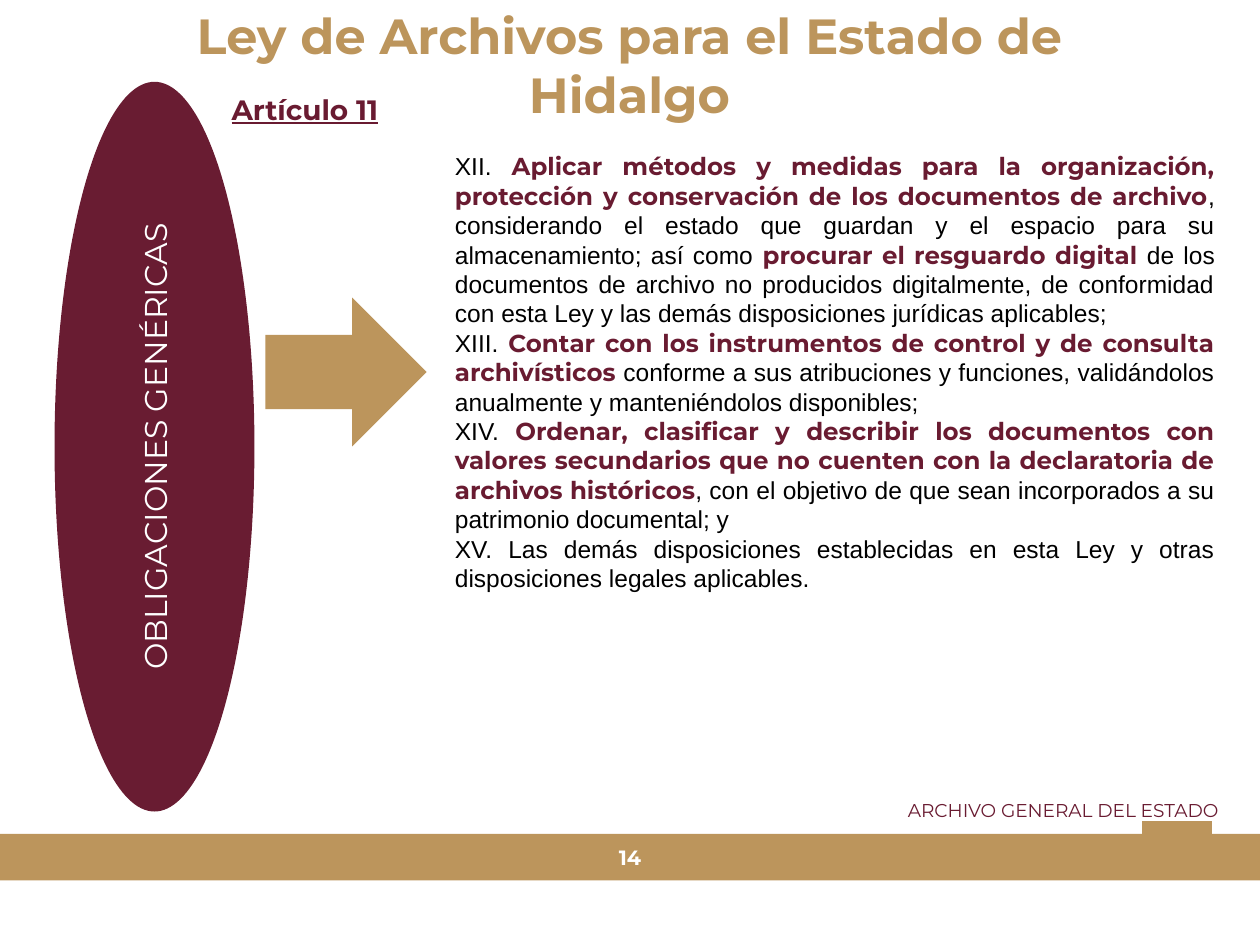
from dataclasses import dataclass

from lxml.etree import SubElement
from pptx import Presentation
from pptx.dml.color import RGBColor as Rgb
from pptx.enum.shapes import MSO_CONNECTOR as Link, MSO_SHAPE as Preset
from pptx.enum.text import MSO_ANCHOR as Anchor, MSO_AUTO_SIZE as Fit, PP_ALIGN as Align
from pptx.oxml.ns import qn
from pptx.util import Cm, Pt


@dataclass(frozen=True)
class Theme:
    gold: str = "BC955C"
    wine: str = "691B31"
    oval: str = "691C32"
    white: str = "FFFFFF"
    black: str = "000000"
    display: str = "Montserrat"
    plain: str = "Arial"
    title: float = 28.2
    label: float = 18
    heading: float = 16
    text: float = 14
    text_line: float = 16.8
    number: float = 11.8
    footer: float = 10.6

    def style(self, size, color, name=None, **extra):
        return {"name": name or self.display, "size": Pt(size), "color": color, "bold": False, **extra}


class SlideBuilder:
    def __init__(self, slide, theme):
        self.slide, self.theme = slide, theme
        self.shapes = slide.shapes

    def fill_text(self, box, paragraphs, align, inset=(0.25, 0.13), anchor=Anchor.TOP, fit=Fit.NONE,
                  **para_format):
        """Fill a shape with paragraphs, each a list of (text, style) spans."""
        frame = box.text_frame
        across, down = map(Cm, inset)
        frame_format = {"word_wrap": True, "auto_size": fit, "vertical_anchor": anchor,
                        "margin_left": across, "margin_right": across,
                        "margin_top": down, "margin_bottom": down}
        for key, value in frame_format.items():
            setattr(frame, key, value)
        for index, spans in enumerate(paragraphs):
            para = frame.add_paragraph() if index else frame.paragraphs[0]
            for key, value in {"alignment": align, **para_format}.items():
                setattr(para, key, value)
            for text, style in spans:
                span = para.add_run()
                span.text = text
                for key, value in style.items():
                    if key == "color":
                        span.font.color.rgb = Rgb.from_string(value)
                    else:
                        setattr(span.font, key, value)

    def place(self, box, area):
        for key, value in zip(("left", "top", "width", "height"), area):
            setattr(box, key, Cm(value))

    def title(self, area, text, style):
        box = self.shapes.title
        self.place(box, area)
        self.fill_text(box, [[(text, style)]], Align.CENTER, (0.23, 0.1))

    def body(self, area, paragraphs):
        box = self.slide.placeholders[1]
        self.place(box, area)
        self.fill_text(box, paragraphs, Align.JUSTIFY, space_before=Pt(0),
                       line_spacing=Pt(self.theme.text_line))
        for para in box.text_frame.paragraphs:
            properties = para._p.get_or_add_pPr()
            for key in ("marL", "indent"):
                properties.set(key, "0")
            SubElement(properties, qn("a:buNone"))

    def text(self, area, text, style, align=Align.CENTER, **options):
        box = self.shapes.add_textbox(*map(Cm, area))
        self.fill_text(box, [[(text, style)]], align, **options)

    def shape(self, preset, area, color):
        shape = self.shapes.add_shape(preset, *map(Cm, area))
        shape.shadow.inherit = False
        shape.fill.solid()
        shape.fill.fore_color.rgb = Rgb.from_string(color)
        shape.line.fill.background()
        return shape

    def upward_label(self, shape, text, style):
        self.fill_text(shape, [[(text, style)]], Align.CENTER, (0.2, 0.1), Anchor.MIDDLE)
        shape.text_frame._txBody.bodyPr.set("vert", "vert270")

    def line(self, start, end, color, width):
        line = self.shapes.add_connector(Link.STRAIGHT, *map(Cm, start + end))
        line.line.color.rgb = Rgb.from_string(color)
        line.line.width = Pt(width)
        SubElement(line._element.spPr, qn("a:effectLst"))


def main():
    theme = Theme()
    deck = Presentation()
    deck.slide_width, deck.slide_height = Cm(25.4), Cm(19.05)
    page = SlideBuilder(deck.slides.add_slide(deck.slide_layouts[1]), theme)

    plain = theme.style(theme.text, theme.black, theme.plain)
    strong = theme.style(theme.text, theme.wine, bold=True)
    obligations = [
        [("XII. ", plain),
         ("Aplicar métodos y medidas para la organización, protección y conservación "
          "de los documentos de archivo", strong),
         (", considerando el estado que guardan y el espacio para su almacenamiento; así como ", plain),
         ("procurar el resguardo digital ", strong),
         ("de los documentos de archivo no producidos digitalmente, de conformidad con esta Ley "
          "y las demás disposiciones jurídicas aplicables;", plain)],
        [("XIII. ", plain),
         ("Contar con los instrumentos de control y de consulta archivísticos ", strong),
         ("conforme a sus atribuciones y funciones, validándolos anualmente "
          "y manteniéndolos disponibles;", plain)],
        [("XIV. ", plain),
         ("Ordenar, clasificar y describir los documentos con valores secundarios "
          "que no cuenten con la declaratoria de archivos históricos", strong),
         (", con el objetivo de que sean incorporados a su patrimonio documental; y", plain)],
        [("XV. Las demás disposiciones establecidas en esta Ley "
          "y otras disposiciones legales aplicables.", plain)],
    ]

    page.shape(Preset.RECTANGLE, (-0.05, 16.81, 25.55, 0.94), theme.gold)
    page.text((12.09, 16.84, 1.22, 0.94), "14",
              theme.style(theme.number, theme.white, bold=True),
              inset=(0.25, 0.25), anchor=Anchor.MIDDLE, line_spacing=0.9)
    page.text((11.89, 16, 12.82, 0.71), "ARCHIVO GENERAL DEL ESTADO",
              theme.style(theme.footer, theme.wine), Align.RIGHT,
              inset=(0.15, 0.15), fit=Fit.SHAPE_TO_FIT_TEXT, line_spacing=0.9)
    page.line((23.03, 16.71), (24.43, 16.71), theme.gold, 9)

    page.title((1.96, 0, 21.46, 1.45), "Ley de Archivos para el Estado de Hidalgo",
               theme.style(theme.title, theme.gold, bold=True))
    oval = page.shape(Preset.OVAL, (1.1, 1.65, 4.03, 14.71), theme.oval)
    page.upward_label(oval, "OBLIGACIONES GENÉRICAS", theme.style(theme.label, theme.white))
    page.shape(Preset.RIGHT_ARROW, (5.35, 6, 3.25, 3), theme.gold)
    page.body((8.92, 2.92, 15.82, 9.25), obligations)
    page.text((3.48, 1.73, 5.33, 0.94), "Artículo 11",
              theme.style(theme.heading, theme.wine, bold=True, underline=True),
              fit=Fit.SHAPE_TO_FIT_TEXT)

    deck.save("out.pptx")


if __name__ == "__main__":
    main()
